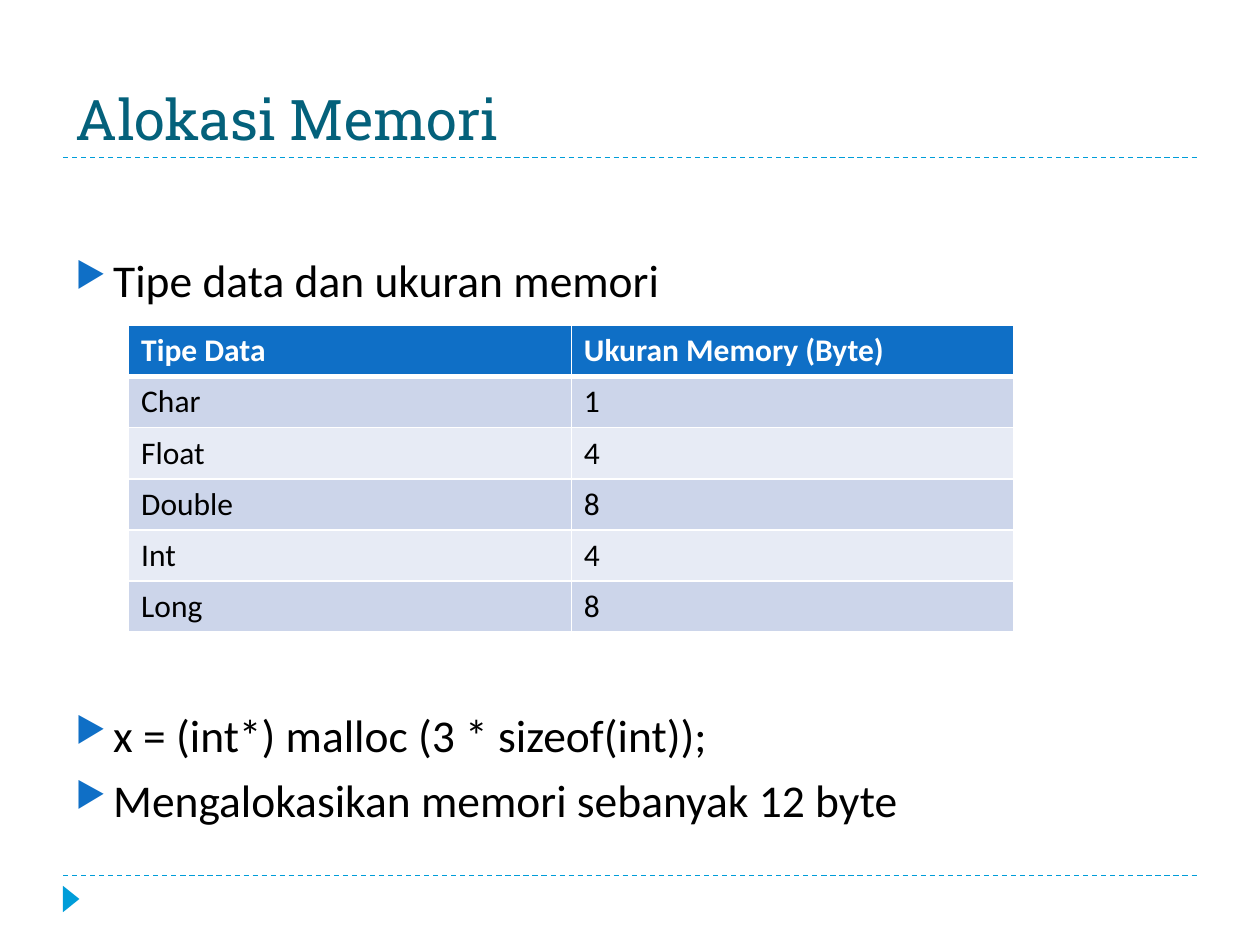
"""Build a slide on memory allocation with a table of data type sizes."""
from dataclasses import dataclass

from lxml.etree import SubElement
from pptx import Presentation
from pptx.dml.color import RGBColor as Rgb
from pptx.enum.dml import MSO_LINE_DASH_STYLE as Dash
from pptx.enum.shapes import MSO_CONNECTOR as Connector, MSO_SHAPE as Shape
from pptx.enum.text import MSO_ANCHOR as Anchor
from pptx.oxml import parse_xml
from pptx.oxml.ns import nsdecls, qn
from pptx.util import Pt


@dataclass(frozen=True)
class Theme:
    title_font: str = "Roboto Slab"
    body_font: str = "Calibri"
    title_size: float = 32
    body_size: float = 26
    table_size: float = 18
    title_color: str = "04617B"
    text_color: str = "000000"
    accent: str = "0F6FC6"
    rule: str = "009DD9"
    white: str = "FFFFFF"
    bands: tuple = ("CCD5EA", "E7EBF5")


class SlideBuilder:
    def __init__(self, slide, theme):
        self.slide = slide
        self.theme = theme

    def apply(self, target, values):
        for name, value in values.items():
            setattr(target, name, value)

    def add_span(self, para, text, color, **font_values):
        span = para.add_run()
        span.text = text
        self.apply(span.font, font_values)
        span.font.color.rgb = Rgb.from_string(color)

    def text_box(self, left, top, width, height, anchor):
        box = self.slide.shapes.add_textbox(*map(Pt, (left, top, width, height)))
        self.apply(box.text_frame, {"word_wrap": True, "vertical_anchor": anchor})
        return box.text_frame

    def rule(self, top):
        line = self.slide.shapes.add_connector(
            Connector.STRAIGHT, Pt(36), Pt(top), Pt(684), Pt(top))
        line.line.color.rgb = Rgb.from_string(self.theme.rule)
        self.apply(line.line, {"width": Pt(0.75), "dash_style": Dash.DASH})
        SubElement(line._element.spPr, qn("a:effectLst"))

    def marker(self, left, top, width, height):
        marker = self.slide.shapes.add_shape(
            Shape.ISOSCELES_TRIANGLE, *map(Pt, (left, top, width, height)))
        marker.rotation = 90
        marker.shadow.inherit = False
        marker.fill.solid()
        marker.fill.fore_color.rgb = Rgb.from_string(self.theme.rule)
        marker.line.fill.background()

    def title(self, text):
        frame = self.text_box(36, 12, 648, 78, Anchor.BOTTOM)
        self.add_span(frame.paragraphs[0], text, self.theme.title_color,
                      name=self.theme.title_font, size=Pt(self.theme.title_size))

    def bullets(self, items):
        frame = self.text_box(36, 140.4, 648, 342, Anchor.TOP)
        for index, (text, gap) in enumerate(items):
            para = frame.add_paragraph() if index else frame.paragraphs[0]
            para.space_before = Pt(gap)
            self.add_span(para, text, self.theme.text_color,
                          name=self.theme.body_font, size=Pt(self.theme.body_size))
            self.bullet(para)

    def bullet(self, para):
        props = para._p.get_or_add_pPr()
        props.set("marL", str(Pt(21.6)))
        props.set("indent", str(-Pt(21.6)))
        color = SubElement(props, qn("a:buClr"))
        SubElement(color, qn("a:srgbClr"), val=self.theme.accent)
        SubElement(props, qn("a:buSzPct"), val="76000")
        SubElement(props, qn("a:buChar"), char="▶")

    def table(self, rows, left, top, width, row_height):
        table = self.slide.shapes.add_table(
            len(rows), len(rows[0]), Pt(left), Pt(top), Pt(width),
            Pt(row_height * len(rows))).table
        for row_index, row in enumerate(rows):
            for column, text in enumerate(row):
                self.cell(table.cell(row_index, column), text, row_index)

    def cell(self, cell, text, row):
        theme = self.theme
        header = row == 0
        cell.fill.solid()
        cell.fill.fore_color.rgb = Rgb.from_string(
            theme.accent if header else theme.bands[(row - 1) % 2])
        self.add_span(cell.text_frame.paragraphs[0], text,
                      theme.white if header else theme.text_color,
                      name=theme.body_font, size=Pt(theme.table_size), bold=header)
        widths = {"L": 1, "R": 1, "T": 3 if row == 1 else 1, "B": 3 if header else 1}
        props = cell._tc.get_or_add_tcPr()
        for index, (side, width) in enumerate(widths.items()):
            props.insert(index, parse_xml(
                f'<a:ln{side} {nsdecls("a")} w="{Pt(width)}"><a:solidFill>'
                f'<a:srgbClr val="{theme.white}"/></a:solidFill></a:ln{side}>'))


def main():
    deck = Presentation()
    deck.slide_width, deck.slide_height = Pt(720), Pt(540)
    page = SlideBuilder(deck.slides.add_slide(deck.slide_layouts[6]), Theme())
    for top in (500.4, 90):
        page.rule(top)
    page.marker(33.1, 509, 15.1, 9.4)
    page.title("Alokasi Memori")
    page.bullets([
        ("Tipe data dan ukuran memori", 6),
        ("x = (int*) malloc (3 * sizeof(int));", 229),
        ("Mengalokasikan memori sebanyak 12 byte", 6),
    ])
    page.table([
        ("Tipe Data", "Ukuran Memory (Byte)"),
        ("Char", "1"),
        ("Float", "4"),
        ("Double", "8"),
        ("Int", "4"),
        ("Long", "8"),
    ], 73.5, 186, 506, 29.2)
    deck.save("out.pptx")


if __name__ == "__main__":
    main()
